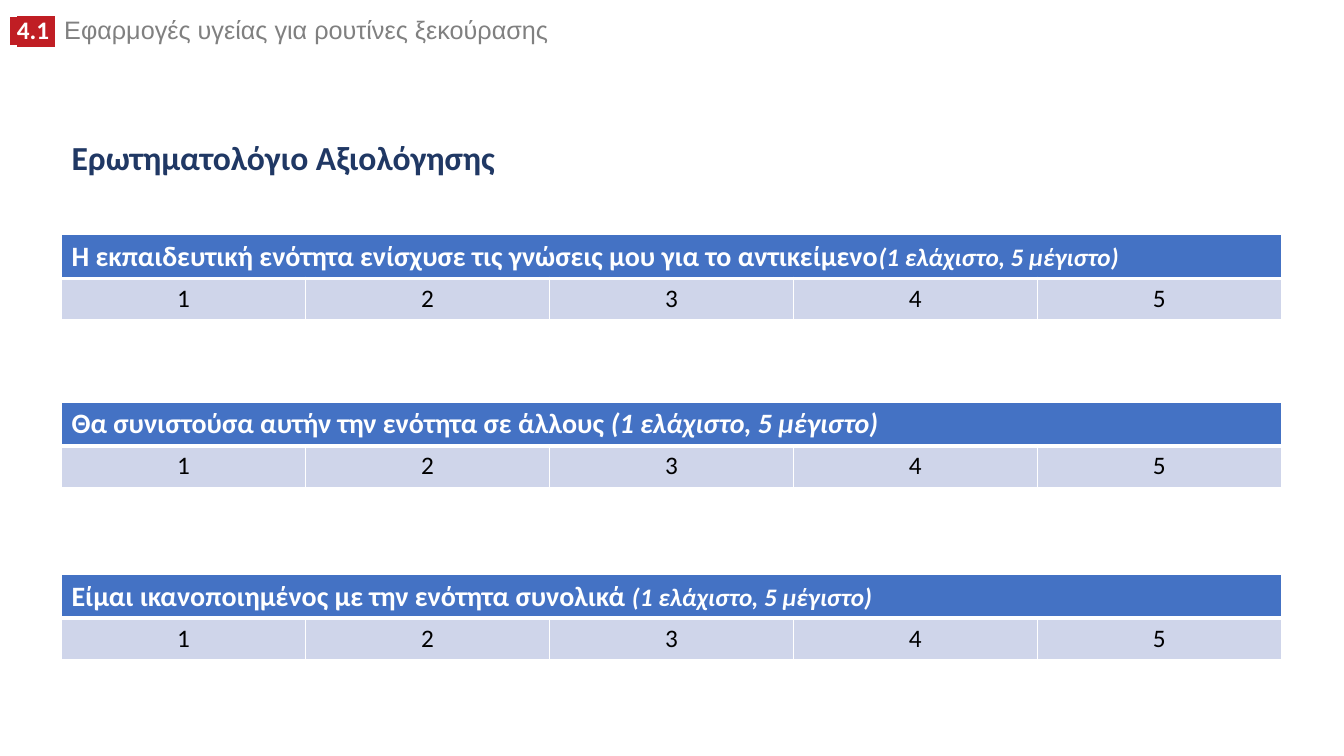
from dataclasses import dataclass
from typing import Optional

import lxml.etree
import pptx
import pptx.dml.color
import pptx.enum.text
import pptx.oxml
import pptx.oxml.ns
import pptx.util
from pptx.util import Inches

RGBColor = pptx.dml.color.RGBColor
Align = pptx.enum.text.PP_ALIGN
Anchor = pptx.enum.text.MSO_ANCHOR

WHITE = RGBColor(0xFF, 0xFF, 0xFF)
BLACK = RGBColor(0x00, 0x00, 0x00)
RED = RGBColor(0xC0, 0x1E, 0x24)
GRAY = RGBColor(0x80, 0x80, 0x80)
NAVY = RGBColor(0x20, 0x38, 0x64)
BLUE = RGBColor(0x44, 0x72, 0xC4)
PALE_BLUE = RGBColor(0xCF, 0xD5, 0xEA)

LEFT, WIDTH = 0.61, 12.1
HEADER_HEIGHT, RATING_HEIGHT = 0.43, 0.41
RATINGS = 5
SCALE_NOTE = "(1 ελάχιστο, 5 μέγιστο)"


@dataclass
class Question:
    text: str
    top: float
    note_size: int = 18


QUESTIONS = [
    Question("Η εκπαιδευτική ενότητα ενίσχυσε τις γνώσεις μου για το αντικείμενο", 2.33),
    Question("Θα συνιστούσα αυτήν την ενότητα σε άλλους ", 3.99, note_size=20),
    Question("Είμαι ικανοποιημένος με την ενότητα συνολικά ", 5.7),
]


def add_text(paragraph, text: str, *, size: float, color: RGBColor,
             font: str = "Calibri", bold: bool = False, italic: bool = False,
             highlight: Optional[RGBColor] = None) -> None:
    run = paragraph.add_run()
    run.text = text
    run.font.size = pptx.util.Pt(size)
    run.font.bold = bold
    run.font.italic = italic
    run.font.color.rgb = color
    run.font.name = font
    if highlight is not None:
        fill = run.font._element.find(pptx.oxml.ns.qn("a:solidFill"))
        mark = lxml.etree.Element(pptx.oxml.ns.qn("a:highlight"))
        lxml.etree.SubElement(mark, pptx.oxml.ns.qn("a:srgbClr"), val=str(highlight))
        fill.addnext(mark)


def format_cell(cell, fill: RGBColor, bottom_width: float) -> None:
    cell.fill.solid()
    cell.fill.fore_color.rgb = fill
    cell.vertical_anchor = Anchor.TOP
    properties = cell._tc.get_or_add_tcPr()
    widths = {"lnL": 1, "lnR": 1, "lnT": 1, "lnB": bottom_width}
    for position, (side, width) in enumerate(widths.items()):
        border = pptx.oxml.parse_xml(
            f'<a:{side} {pptx.oxml.ns.nsdecls("a")} w="{pptx.util.Pt(width)}">'
            f'<a:solidFill><a:srgbClr val="{WHITE}"/></a:solidFill></a:{side}>')
        properties.insert(position, border)


def add_question(slide, question: Question) -> None:
    table = slide.shapes.add_table(
        2, RATINGS, Inches(LEFT), Inches(question.top),
        Inches(WIDTH), Inches(HEADER_HEIGHT + RATING_HEIGHT)).table
    table.rows[0].height = Inches(HEADER_HEIGHT)
    table.rows[1].height = Inches(RATING_HEIGHT)

    for column in range(RATINGS):
        format_cell(table.cell(0, column), BLUE, bottom_width=3)
        rating = table.cell(1, column)
        format_cell(rating, PALE_BLUE, bottom_width=1)
        paragraph = rating.text_frame.paragraphs[0]
        paragraph.alignment = Align.CENTER
        add_text(paragraph, str(column + 1), size=18, color=BLACK)

    header = table.cell(0, 0)
    header.merge(table.cell(0, RATINGS - 1))
    paragraph = header.text_frame.paragraphs[0]
    add_text(paragraph, question.text, size=20, color=WHITE, bold=True)
    add_text(paragraph, SCALE_NOTE, size=question.note_size, color=WHITE,
             bold=True, italic=True)


def add_section_label(slide) -> None:
    label = slide.shapes.add_textbox(Inches(0), Inches(0.09), Inches(9.52), Inches(0.43))
    label.text_frame.word_wrap = True
    paragraph = label.text_frame.paragraphs[0]
    paragraph.line_spacing = 0.8
    add_text(paragraph, " ", size=18, color=WHITE, font="Arial", bold=True, highlight=RED)
    add_text(paragraph, "4.1 ", size=18, color=WHITE, bold=True, highlight=RED)
    add_text(paragraph, " ", size=24, color=BLACK, font="Arial")
    add_text(paragraph, "Εφαρμογές υγείας για ρουτίνες ξεκούρασης",
             size=18, color=GRAY, font="Arial")


def format_title(slide) -> None:
    title = slide.shapes.title
    title.left, title.top = Inches(LEFT), Inches(1.18)
    title.width, title.height = Inches(WIDTH), Inches(0.8)
    frame = title.text_frame
    frame.auto_size = pptx.enum.text.MSO_AUTO_SIZE.NONE
    frame.vertical_anchor = Anchor.MIDDLE
    paragraph = frame.paragraphs[0]
    paragraph.alignment = Align.LEFT
    paragraph.line_spacing = 0.9
    add_text(paragraph, "Ερωτηματολόγιο Αξιολόγησης", size=24, color=NAVY, bold=True)


def main() -> None:
    presentation = pptx.Presentation()
    presentation.slide_width = Inches(13.33)
    presentation.slide_height = Inches(7.5)
    slide = presentation.slides.add_slide(presentation.slide_layouts[5])

    # Section label and title
    add_section_label(slide)
    format_title(slide)

    # Rating tables
    for question in QUESTIONS:
        add_question(slide, question)

    presentation.save("out.pptx")


if __name__ == "__main__":
    main()
